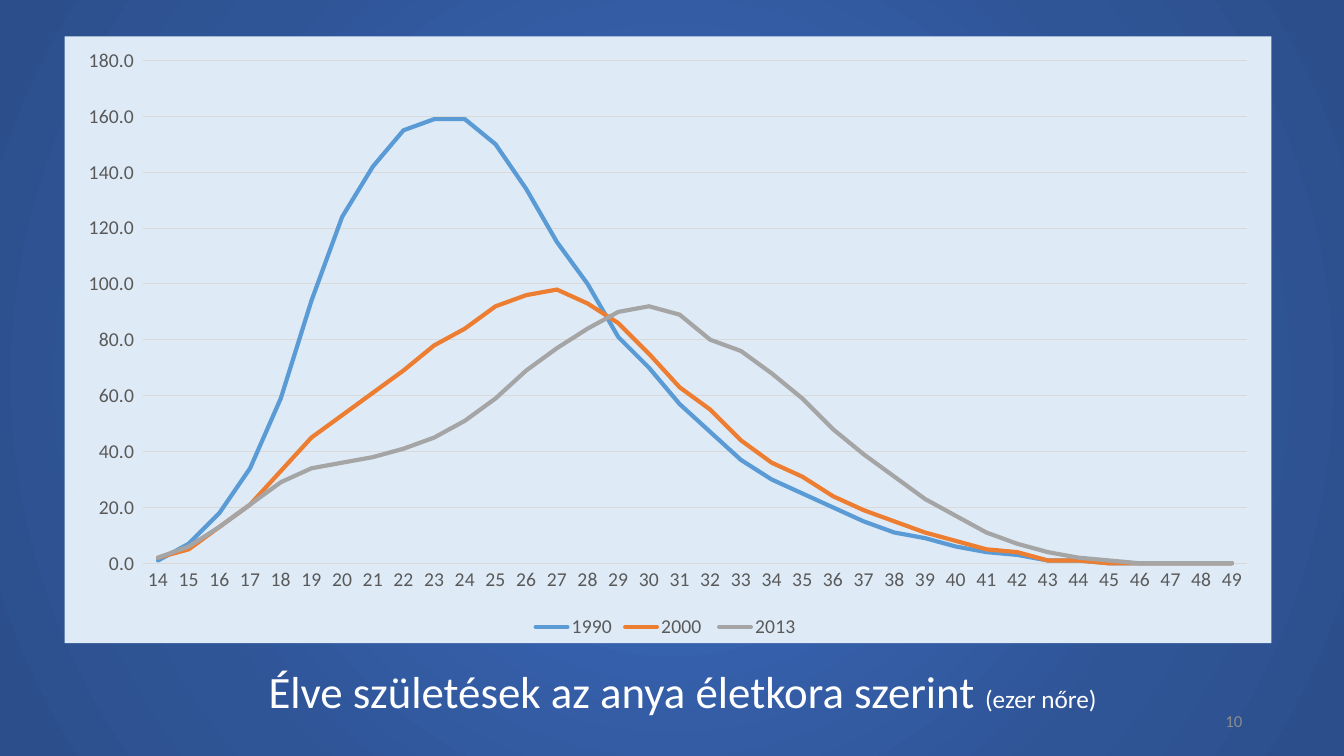
from lxml import etree
from pptx import Presentation
from pptx.chart.data import CategoryChartData
from pptx.dml.color import RGBColor
from pptx.enum.chart import XL_CHART_TYPE, XL_LEGEND_POSITION, XL_TICK_MARK
from pptx.enum.text import MSO_ANCHOR, MSO_AUTO_SIZE, PP_ALIGN
from pptx.oxml.ns import qn
from pptx.util import Inches, Pt

WHITE = RGBColor(0xFF, 0xFF, 0xFF)
NUMBER_GREY = RGBColor(0x8C, 0x8C, 0x8C)
LABEL_GREY = RGBColor(0x59, 0x59, 0x59)
GRID_GREY = RGBColor(0xD9, 0xD9, 0xD9)
PANEL_BLUE = RGBColor(0xDE, 0xEB, 0xF7)
BLUE = RGBColor(0x5B, 0x9B, 0xD5)
ORANGE = RGBColor(0xED, 0x7D, 0x31)
GREY = RGBColor(0xA5, 0xA5, 0xA5)
BRIGHT = RGBColor(0x38, 0x64, 0xB3)
MIDDLE = RGBColor(0x2F, 0x55, 0x97)
DARK = RGBColor(0x2C, 0x4F, 0x8C)

LINE = XL_CHART_TYPE.LINE
BOTTOM = XL_LEGEND_POSITION.BOTTOM
NO_TICK = XL_TICK_MARK.NONE
CENTER, RIGHT = PP_ALIGN.CENTER, PP_ALIGN.RIGHT
TOP, MIDDLE_ANCHOR = MSO_ANCHOR.TOP, MSO_ANCHOR.MIDDLE
GROW, FIXED = MSO_AUTO_SIZE.SHAPE_TO_FIT_TEXT, MSO_AUTO_SIZE.NONE

# Content
FONT = "Calibri"
WIDTH, HEIGHT = 13.33, 7.5
GRADIENT = [(0, BRIGHT), (23, BRIGHT), (69, MIDDLE), (97, DARK)]
AGES = [str(age) for age in range(14, 50)]
BIRTHS = [
    ("1990", BLUE, [1, 7, 18, 34, 59, 94, 124, 142, 155, 159, 159, 150,
                    134, 115, 100, 81, 70, 57, 47, 37, 30, 25, 20, 15,
                    11, 9, 6, 4, 3, 1, 1, 0, 0, 0, 0, 0]),
    ("2000 ", ORANGE, [2, 5, 13, 21, 33, 45, 53, 61, 69, 78, 84, 92,
                       96, 98, 93, 86, 75, 63, 55, 44, 36, 31, 24, 19,
                       15, 11, 8, 5, 4, 1, 1, 0, 0, 0, 0, 0]),
    ("2013 ", GREY, [2, 6, 13, 21, 29, 34, 36, 38, 41, 45, 51, 59,
                     69, 77, 84, 90, 92, 89, 80, 76, 68, 59, 48, 39,
                     31, 23, 17, 11, 7, 4, 2, 1, 0, 0, 0, 0]),
]
CHART_AREA = (0.64, 0.36, 11.97, 6.02)
TEXTS = [
    {"area": (1.11, 6.54, 11.32, 0.64), "align": CENTER,
     "frame": {"auto_size": GROW, "vertical_anchor": TOP},
     "spans": [("Élve születések az anya életkora szerint ", 32, WHITE),
               ("(ezer nőre)", 18, WHITE)]},
    {"area": (9.42, 6.95, 3, 0.4), "align": RIGHT,
     "frame": {"auto_size": FIXED, "vertical_anchor": MIDDLE_ANCHOR},
     "spans": [("10", 12, NUMBER_GREY)]},
]


def set_all(target, values):
    for name, value in values.items():
        setattr(target, name, value)


def style_font(font, size, color):
    set_all(font, {"name": FONT, "size": Pt(size)})
    font.color.rgb = color


def style_line(line, color, width):
    line.color.rgb = color
    line.width = Pt(width)


def add_solid(parent, color):
    fill = etree.SubElement(parent, qn("a:solidFill"))
    etree.SubElement(fill, qn("a:srgbClr"), val=str(color))


def paint_background(page):
    page.background.fill.gradient()
    gradient = next(page.element.iter(qn("a:gradFill")))
    for child in list(gradient):
        gradient.remove(child)
    stops = etree.SubElement(gradient, qn("a:gsLst"))
    for percent, color in GRADIENT:
        stop = etree.SubElement(stops, qn("a:gs"), pos=str(percent * 1000))
        etree.SubElement(stop, qn("a:srgbClr"), val=str(color))
    circle = etree.SubElement(gradient, qn("a:path"))
    circle.set("path", "circle")
    center = {side: "50000" for side in "ltrb"}
    etree.SubElement(circle, qn("a:fillToRect"), center)


def add_birth_chart(page):
    data = CategoryChartData(number_format="0.0_)")
    data.categories = AGES
    for year, _, values in BIRTHS:
        data.add_series(year, values)
    area = [Inches(length) for length in CHART_AREA]
    chart = page.shapes.add_chart(LINE, *area, data).chart
    set_all(chart, {"has_title": False, "has_legend": True})
    style_font(chart.font, 14, LABEL_GREY)

    # Panel behind the plot
    panel = etree.Element(qn("c:spPr"))
    add_solid(panel, PANEL_BLUE)
    border = etree.SubElement(panel, qn("a:ln"))
    etree.SubElement(border, qn("a:noFill"))
    chart.element.find(qn("c:chart")).addnext(panel)

    # Axes and legend
    ages, rate = chart.category_axis, chart.value_axis
    for axis in (ages, rate):
        set_all(axis, {"major_tick_mark": NO_TICK, "minor_tick_mark": NO_TICK})
        style_font(axis.tick_labels.font, 14, LABEL_GREY)
    style_line(ages.format.line, GRID_GREY, 0.75)
    set_all(rate, {"minimum_scale": 0, "maximum_scale": 180,
                   "major_unit": 20, "has_major_gridlines": True})
    set_all(rate.tick_labels, {"number_format": "0.0_)",
                               "number_format_is_linked": False})
    rate.format.line.fill.background()
    style_line(rate.major_gridlines.format.line, GRID_GREY, 0.75)
    set_all(chart.legend, {"position": BOTTOM, "include_in_layout": False})
    style_font(chart.legend.font, 14, LABEL_GREY)

    # One curve per year
    for curve, (_, color, _) in zip(chart.plots[0].series, BIRTHS):
        curve.smooth = False
        style_line(curve.format.line, color, 3)
        curve.format.line._get_or_add_ln().set("cap", "rnd")


def add_text(page, text):
    box = page.shapes.add_textbox(*[Inches(length) for length in text["area"]])
    set_all(box.text_frame, {"word_wrap": True, **text["frame"]})
    para = box.text_frame.paragraphs[0]
    para.alignment = text["align"]
    for words, size, color in text["spans"]:
        span = para.add_run()
        span.text = words
        style_font(span.font, size, color)


def main():
    deck = Presentation()
    set_all(deck, {"slide_width": Inches(WIDTH),
                   "slide_height": Inches(HEIGHT)})
    page = deck.slides.add_slide(deck.slide_layouts[6])
    paint_background(page)
    add_birth_chart(page)
    for text in TEXTS:
        add_text(page, text)
    deck.save("out.pptx")


if __name__ == "__main__":
    main()
